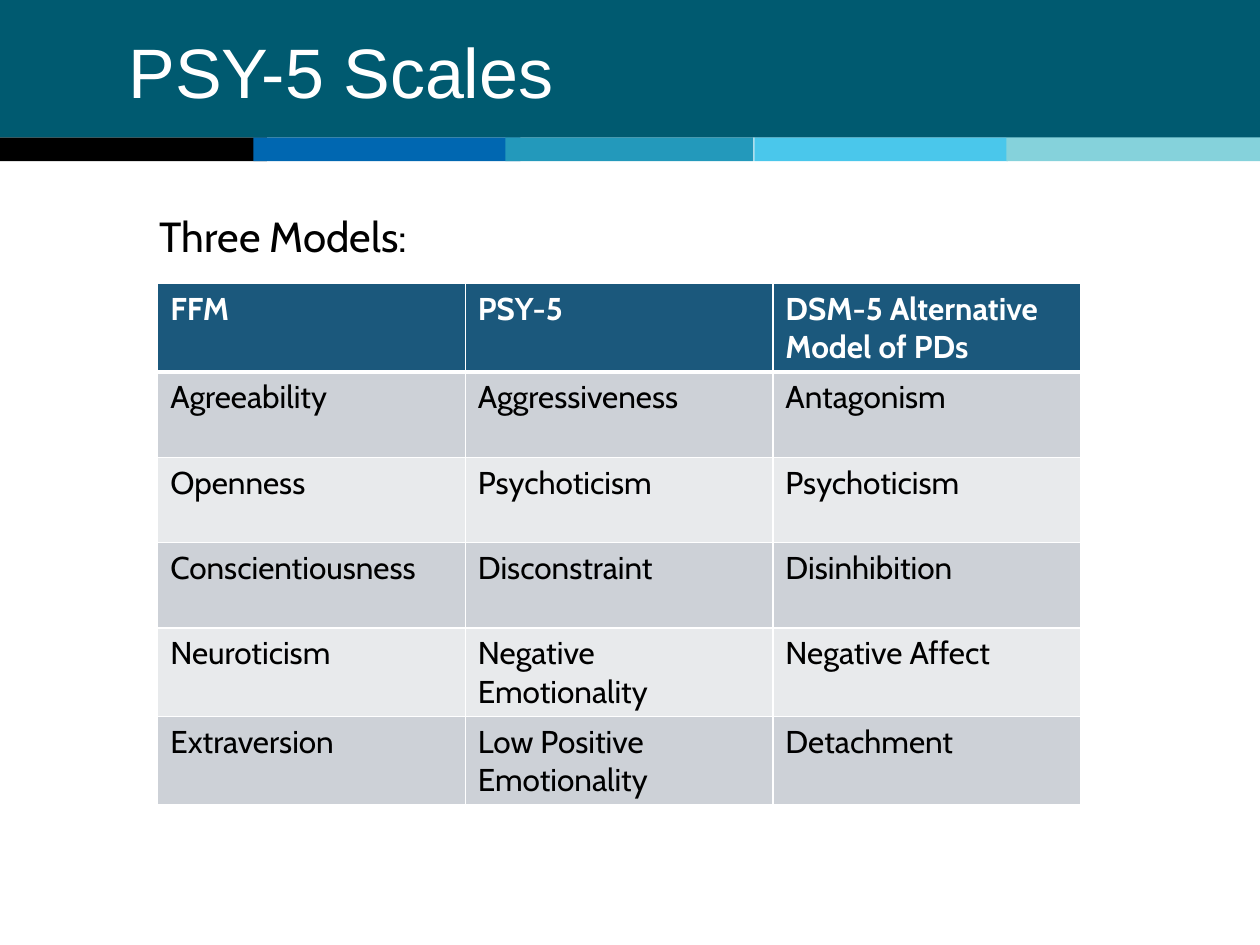
"""Builds the PSY-5 Scales slide with a colour band and a table of three models."""
from dataclasses import dataclass

from lxml import etree
from pptx import Presentation
from pptx.dml.color import RGBColor
from pptx.enum.shapes import MSO_SHAPE
from pptx.enum.text import MSO_ANCHOR
from pptx.oxml.ns import qn
from pptx.util import Cm, Pt

RECTANGLE = MSO_SHAPE.RECTANGLE
TOP = MSO_ANCHOR.TOP
BLANK_LAYOUT = 6


@dataclass(frozen=True)
class Theme:
    white: str = "FFFFFF"
    black: str = "000000"
    banner: str = "005A70"
    header: str = "1B587C"
    bands: tuple = ("CDD1D7", "E8EAEC")
    title_font: str = "Arial"
    body_font: str = "Cabin"
    title_size: int = 40
    body_size: int = 24
    cell_size: int = 18
    thin: int = 1
    thick: int = 3


class SlideBuilder:
    def __init__(self, page, theme):
        self.page = page
        self.theme = theme

    def block(self, left, top, width, height, color):
        box = self.page.shapes.add_shape(RECTANGLE, Cm(left), Cm(top), Cm(width), Cm(height))
        box.shadow.inherit = False
        box.fill.solid()
        box.fill.fore_color.rgb = RGBColor.from_string(color)
        box.line.fill.background()

    def style(self, para, font, size, color, bold=False):
        for span in para.runs:
            span.font.name = font
            span.font.size = Pt(size)
            span.font.bold = bold
            span.font.color.rgb = RGBColor.from_string(color)

    def text(self, left, top, width, height, words, font, size, color, before=0):
        box = self.page.shapes.add_textbox(Cm(left), Cm(top), Cm(width), Cm(height))
        frame = box.text_frame
        frame.word_wrap = True
        frame.vertical_anchor = TOP
        frame.text = words
        para = frame.paragraphs[0]
        para.line_spacing = 0.9
        para.space_before = Pt(before)
        self.style(para, font, size, color)

    def border(self, cell, side, width):
        properties = cell._tc.get_or_add_tcPr()
        line = etree.SubElement(properties, qn(f"a:ln{side}"), w=str(Pt(width)))
        fill = etree.SubElement(line, qn("a:solidFill"))
        etree.SubElement(fill, qn("a:srgbClr"), val=self.theme.white)

    def table(self, left, top, column_width, row_heights, rows):
        theme = self.theme
        columns = len(rows[0])
        frame = self.page.shapes.add_table(
            len(rows), columns, Cm(left), Cm(top),
            Cm(column_width * columns), Cm(sum(row_heights)))
        grid = frame.table
        for column in grid.columns:
            column.width = Cm(column_width)
        for index, (height, words) in enumerate(zip(row_heights, rows)):
            grid.rows[index].height = Cm(height)
            is_header = index == 0
            fill = theme.header if is_header else theme.bands[(index - 1) % 2]
            color = theme.white if is_header else theme.black
            widths = {"L": theme.thin, "R": theme.thin,
                      "T": theme.thick if index == 1 else theme.thin,
                      "B": theme.thick if is_header else theme.thin}
            for cell, word in zip(grid.rows[index].cells, words):
                cell.text_frame.text = word
                self.style(cell.text_frame.paragraphs[0], theme.body_font,
                           theme.cell_size, color, is_header)
                for side, width in widths.items():
                    self.border(cell, side, width)
                cell.fill.solid()
                cell.fill.fore_color.rgb = RGBColor.from_string(fill)


STRIPE_BOTTOM = 3.25
STRIPES = [
    (0, 2.77, 5.38, "000000"),
    (5.11, 2.77, 5.38, "0067B1"),
    (10.19, 2.77, 5, "2399BB"),
    (15.21, 2.77, 5.11, "4AC7EB"),
    (20.29, 2.62, 5.11, "85D2DB"),
]
MODELS = [
    ("FFM", "PSY-5", "DSM-5 Alternative Model of PDs"),
    ("Agreeability", "Aggressiveness", "Antagonism"),
    ("Openness", "Psychoticism", "Psychoticism"),
    ("Conscientiousness", "Disconstraint", "Disinhibition"),
    ("Neuroticism", "Negative Emotionality", "Negative Affect"),
    ("Extraversion", "Low Positive Emotionality", "Detachment"),
]


def main():
    theme = Theme()
    deck = Presentation()
    deck.slide_width, deck.slide_height = Cm(25.4), Cm(19.05)
    page = deck.slides.add_slide(deck.slide_layouts[BLANK_LAYOUT])
    builder = SlideBuilder(page, theme)
    for left, top, width, color in STRIPES:
        builder.block(left, top, width, STRIPE_BOTTOM - top, color)
    builder.block(0, 0, 25.4, 2.77, theme.banner)
    builder.text(2.34, 0.64, 20.32, 3.18, "PSY-5 Scales",
                 theme.title_font, theme.title_size, theme.white)
    builder.text(2.97, 4.24, 21.39, 12.9, "Three Models:",
                 theme.body_font, theme.body_size, theme.black, before=10)
    builder.table(3.18, 5.72, 6.2, [1.72] * 4 + [1.78] * 2, MODELS)
    deck.save("out.pptx")


if __name__ == "__main__":
    main()
